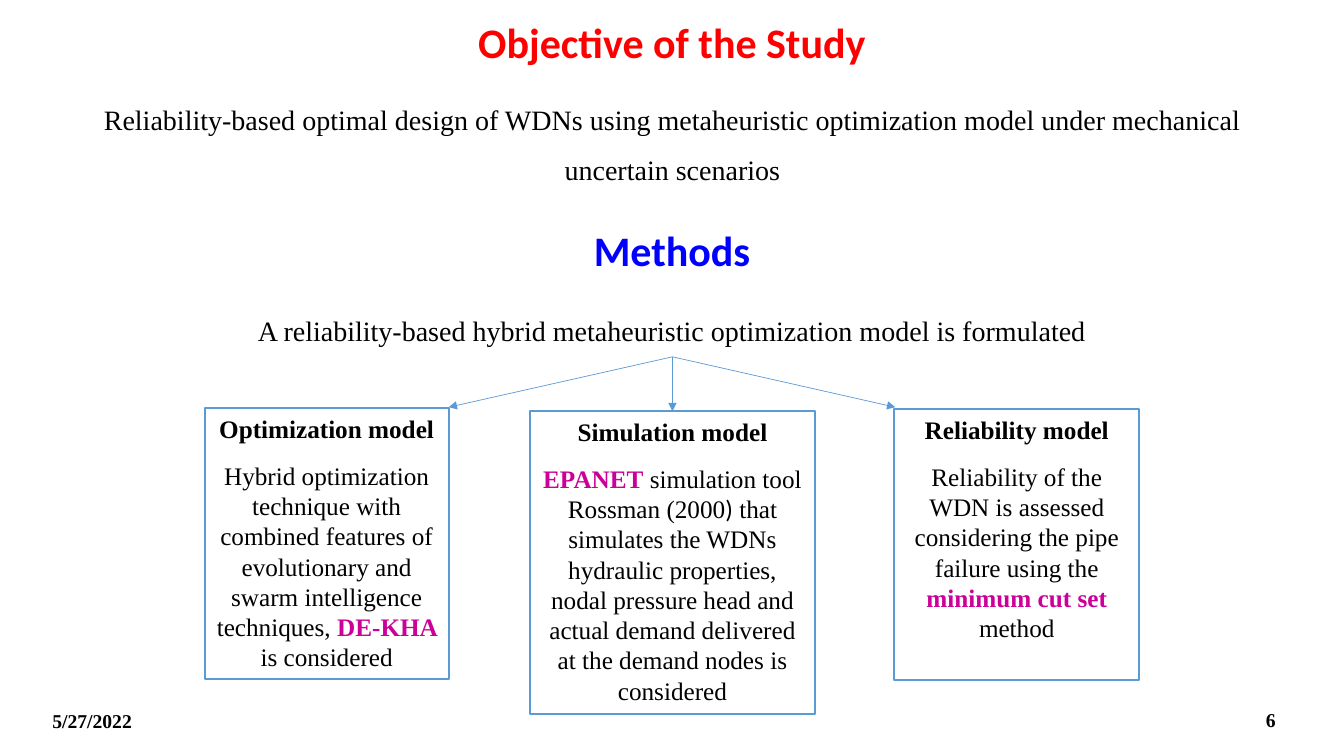
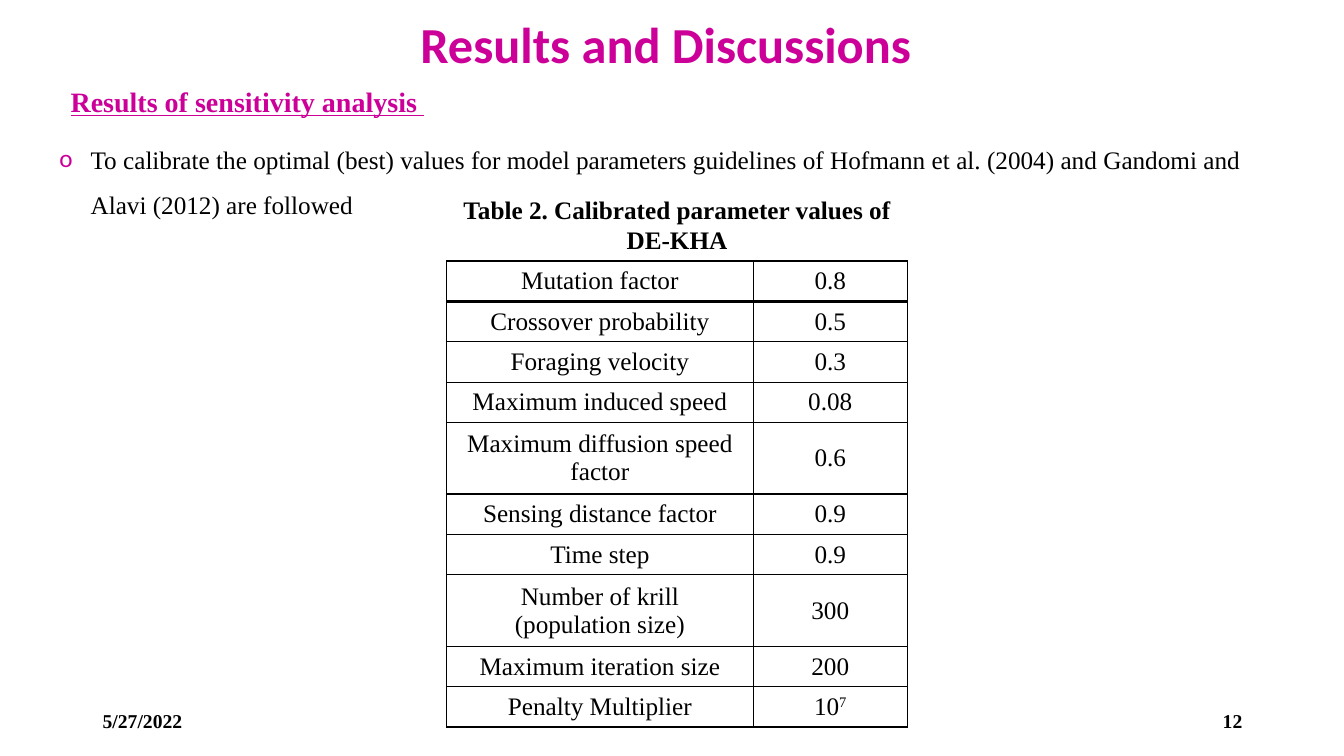
from dataclasses import dataclass, field
from typing import Any

from lxml.etree import SubElement
from pptx import Presentation
from pptx.dml.color import RGBColor
from pptx.enum.shapes import MSO_CONNECTOR as Conn, MSO_SHAPE as Shape
from pptx.enum.text import MSO_ANCHOR as Anchor, PP_ALIGN as Align
from pptx.oxml.ns import qn
from pptx.util import Inches, Pt

COLORS = {
    "black": "000000",
    "white": "FFFFFF",
    "red": "FF0000",
    "blue": "0000FF",
    "magenta": "CC0099",
    "line": "5B9BD5",
}
SERIF, SANS = "Times New Roman", "Calibri"


@dataclass
class Run:
    text: str
    size: float = 18
    color: str = "black"
    bold: bool = False
    underline: bool = False
    name: str = SERIF
    baseline: int = 0


@dataclass
class Para:
    runs: list[Run]
    fmt: dict[str, Any] = field(default_factory=dict)
    bullet: str = ""


@dataclass
class ModelBox:
    at: tuple[float, float, float, float]
    heading: str
    body: list[Run]


def rgb(color: str) -> RGBColor:
    return RGBColor.from_string(COLORS[color])


def apply(target, values: dict[str, Any]) -> None:
    for key, value in values.items():
        setattr(target, key, value)


def add_bullet(p, char: str) -> None:
    pPr = p._p.get_or_add_pPr()
    apply_indent = {"marL": Inches(0.31), "indent": -Inches(0.31)}
    for key, value in apply_indent.items():
        pPr.set(key, str(int(value)))
    clr = SubElement(pPr, qn("a:buClr"))
    SubElement(clr, qn("a:srgbClr")).set("val", COLORS["magenta"])
    SubElement(pPr, qn("a:buFont")).set("typeface", SANS)
    SubElement(pPr, qn("a:buChar")).set("char", char)


def write(tf, paras: list[Para]) -> None:
    for i, para in enumerate(paras):
        p = tf.add_paragraph() if i else tf.paragraphs[0]
        if para.bullet:
            add_bullet(p, para.bullet)
        apply(p, {"alignment": Align.CENTER} | para.fmt)
        for run in para.runs:
            r = p.add_run()
            r.text = run.text
            apply(r.font, {"size": Pt(run.size), "bold": run.bold, "name": run.name})
            r.font.color.rgb = rgb(run.color)
            if run.underline:
                r.font.underline = True
            if run.baseline:
                r._r.get_or_add_rPr().set("baseline", str(run.baseline * 1000))


def add_text(s, at: tuple, paras: list[Para], wrap: bool = True, anchor=Anchor.TOP) -> None:
    sp = s.shapes.add_textbox(*map(Inches, at))
    apply(sp.text_frame, {"word_wrap": wrap, "vertical_anchor": anchor})
    write(sp.text_frame, paras)


def add_title(s, at: tuple, text: str, color: str, size: float = 30) -> None:
    add_text(s, at, [Para([Run(text, size, color, True, name=SANS)])], wrap=False)


def add_footer(s, date_at: tuple, number_at: tuple, number: str) -> None:
    for at, text, side in (
        (date_at, "5/27/2022", Align.LEFT),
        (number_at, number, Align.RIGHT),
    ):
        para = Para([Run(text, 14, bold=True)], {"alignment": side})
        add_text(s, at, [para], anchor=Anchor.MIDDLE)


def add_box(s, at: tuple, paras: list[Para], line: str, width: float):
    sp = s.shapes.add_shape(Shape.RECTANGLE, *map(Inches, at))
    sp.shadow.inherit = False
    sp.fill.solid()
    sp.fill.fore_color.rgb = rgb("white")
    sp.line.color.rgb = rgb(line)
    sp.line.width = Pt(width)
    apply(sp.text_frame, {"word_wrap": True, "vertical_anchor": Anchor.TOP})
    write(sp.text_frame, paras)
    return sp


def add_arrow(s, start: tuple, end: tuple):
    cx = s.shapes.add_connector(Conn.STRAIGHT, *map(Inches, start + end))
    cx.line.color.rgb = rgb("line")
    cx.line.width = Pt(0.5)
    SubElement(cx.line._get_or_add_ln(), qn("a:tailEnd")).set("type", "triangle")
    SubElement(cx._element.spPr, qn("a:effectLst"))
    return cx


def set_borders(cell, widths: dict[str, float]) -> None:
    tcPr = cell._tc.get_or_add_tcPr()
    for side, width in widths.items():
        ln = SubElement(tcPr, qn(f"a:ln{side}"))
        ln.set("w", str(int(Pt(width))))
        fill = SubElement(ln, qn("a:solidFill"))
        SubElement(fill, qn("a:srgbClr")).set("val", COLORS["black"])


MODELS = [
    ModelBox((2.03, 4.05, 2.42, 2.69), "Optimization model", [
        Run("Hybrid optimization technique with combined features of evolutionary "
            "and swarm intelligence techniques, "),
        Run("DE-KHA ", color="magenta", bold=True),
        Run("is considered"),
    ]),
    ModelBox((5.26, 4.08, 2.82, 3), "Simulation model", [
        Run("EPANET", color="magenta", bold=True),
        Run(" simulation tool Rossman (2000"),
        Run(")", name=SANS),
        Run(" that simulates the WDNs hydraulic properties, nodal pressure head "
            "and actual demand delivered at the demand nodes is considered"),
    ]),
    ModelBox((8.87, 4.06, 2.43, 2.69), "Reliability model", [
        Run("Reliability of the WDN is assessed considering the pipe failure using the "),
        Run("minimum cut set ", color="magenta", bold=True),
        Run("method"),
    ]),
]

PARAMETERS = [
    (["Mutation factor"], "0.8", ""),
    (["Crossover probability"], "0.5", ""),
    (["Foraging velocity"], "0.3", ""),
    (["Maximum induced speed"], "0.08", ""),
    (["Maximum diffusion speed factor"], "0.6", ""),
    (["Sensing distance factor"], "0.9", ""),
    (["Time step"], "0.9", ""),
    (["Number of krill", "(population size)"], "300", ""),
    (["Maximum iteration size"], "200", ""),
    (["Penalty Multiplier"], "10", "7"),
]
TALL_ROWS = (4, 7)


def build_methods(s) -> None:
    add_title(s, (4.62, 0.11, 4.09, 0.61), "Objective of the Study", "red")
    objective = ("Reliability-based optimal design of WDNs using metaheuristic "
                 "optimization model under mechanical uncertain scenarios")
    add_text(s, (0.69, 0.8, 11.96, 1.05),
             [Para([Run(objective, 20)], {"line_spacing": 1.5})])
    add_title(s, (5.74, 2.18, 1.85, 0.61), "Methods", "blue")
    add_footer(s, (0.42, 6.95, 1.11, 0.4), (12.11, 6.94, 0.64, 0.4), "6")
    summary = "A reliability-based hybrid metaheuristic optimization model is formulated"
    add_box(s, (0.57, 2.89, 12.19, 3.03),
            [Para([Run(summary, 20)], {"line_spacing": 1.5})], "white", 1)
    boxes = [
        add_box(s, model.at, [
            Para([Run(model.heading, bold=True)]),
            Para(model.body, {"space_before": Pt(12)}),
        ], "line", 1.5)
        for model in MODELS
    ]
    hub = (6.67, 3.54)
    add_arrow(s, hub, (4.45, 4.04))
    add_arrow(s, hub, (6.67, 4.08)).end_connect(boxes[1], 0)
    add_arrow(s, hub, (8.88, 4.04))


def add_parameter_table(s) -> None:
    frame = s.shapes.add_table(len(PARAMETERS), 2, *map(Inches, (4.43, 2.59, 4.57, 4.62)))
    tbl = frame.table
    apply(tbl, {"first_row": False, "horz_banding": False})
    for col, width in zip(tbl.columns, (3.04, 1.53)):
        col.width = Inches(width)
    for i, (label, value, power) in enumerate(PARAMETERS):
        tbl.rows[i].height = Inches(0.71 if i in TALL_ROWS else 0.4)
        value_runs = [Run(value)] + ([Run(power, baseline=30)] if power else [])
        contents = ([Para([Run(text)]) for text in label], [Para(value_runs)])
        for j, paras in enumerate(contents):
            cell = tbl.cell(i, j)
            set_borders(cell, {"L": 1, "R": 1, "T": 2 if i == 1 else 1, "B": 2 if i == 0 else 1})
            cell.fill.solid()
            cell.fill.fore_color.rgb = rgb("white")
            cell.vertical_anchor = Anchor.MIDDLE
            write(cell.text_frame, paras)


def build_results(s) -> None:
    add_footer(s, (0.92, 6.95, 1.33, 0.4), (11.87, 6.95, 0.55, 0.4), "12")
    add_title(s, (4.04, 0.08, 5.13, 0.71), "Results and Discussions", "magenta", 36)
    add_text(s, (0.59, 0.79, 3.73, 0.44),
             [Para([Run("Results of sensitivity analysis ", 20, "magenta", True, True)])],
             wrap=False)
    guideline = ("To calibrate the optimal (best) values for model parameters guidelines "
                 "of Hofmann et al. (2004) and Gandomi and Alavi (2012) are followed")
    fmt = {"alignment": Align.JUSTIFY, "line_spacing": 1.5, "space_after": Pt(12)}
    add_text(s, (0.49, 1.23, 11.92, 1.01), [Para([Run(guideline)], fmt, "o")])
    caption = "Table 2. Calibrated parameter values of DE-KHA"
    add_text(s, (4.33, 1.88, 4.77, 0.71), [Para([Run(caption, bold=True)])])
    add_parameter_table(s)


def main() -> None:
    prs = Presentation()
    prs.slide_width, prs.slide_height = Inches(13.33), Inches(7.5)
    for build in (build_methods, build_results):
        build(prs.slides.add_slide(prs.slide_layouts[6]))
    prs.save("out.pptx")


if __name__ == "__main__":
    main()
